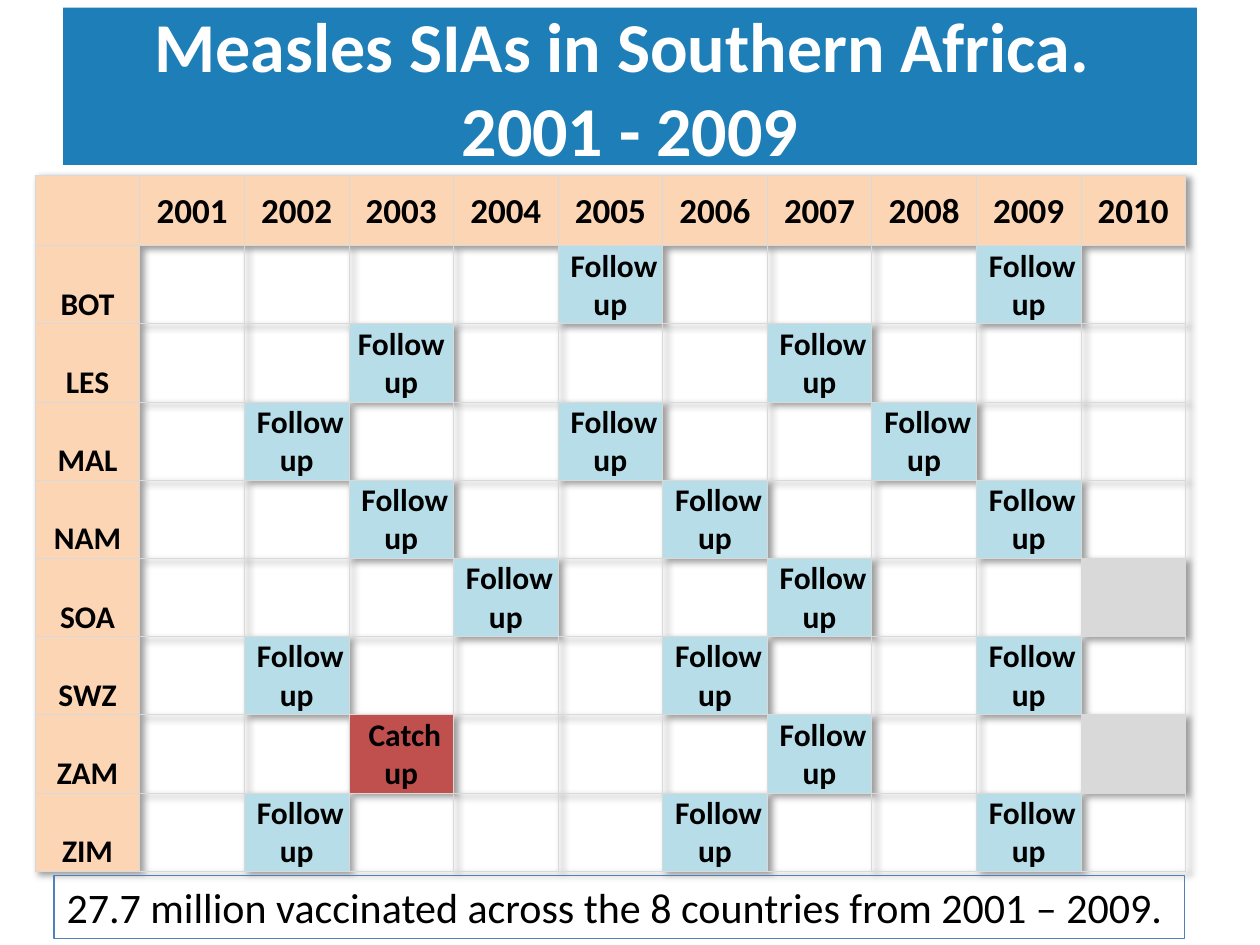
from lxml import etree
from pptx import Presentation
from pptx.dml import color
from pptx.enum import shapes, text
from pptx.oxml import ns, parse_xml
from pptx.util import Inches, Pt

YEARS = range(2001, 2011)
FOLLOW_UPS = {
    "BOT": (2005, 2009),
    "LES": (2003, 2007),
    "MAL": (2002, 2005, 2008),
    "NAM": (2003, 2006, 2009),
    "SOA": (2004, 2007),
    "SWZ": (2002, 2006, 2009),
    "ZAM": (2007,),
    "ZIM": (2002, 2006, 2009),
}
SPECIAL = {
    ("LES", 2003): ("Follow up", "B7DEE8"),
    ("ZAM", 2003): (" Catch up", "C0504D"),
    ("SOA", 2010): ("", "D9D9D9"),
    ("ZAM", 2010): ("", "D9D9D9"),
}
HEADING = "FCD5B5"
FOLLOW = "B7DEE8"


def rgb(value):
    """Turn a hex string into a colour."""
    return color.RGBColor.from_string(value)


def paint(fill, value):
    """Fill with a colour, or with nothing."""
    if value:
        fill.solid()
        fill.fore_color.rgb = rgb(value)
    else:
        fill.background()


def write(frame, words, size=18, ink="000000", bold=False, align=text.PP_ALIGN.CENTER):
    """Write one paragraph, breaking lines where the words do."""
    para = frame.paragraphs[0]
    para.alignment = align
    for index, line in enumerate(words.splitlines()):
        if index:
            para.add_line_break()
        span = para.add_run()
        span.text = line
        span.font.name = "Calibri"
        span.font.size = Pt(size)
        span.font.bold = bold
        span.font.color.rgb = rgb(ink)


def add_title(page, words):
    """Place the title on its blue band."""
    box = page.shapes.title
    box.left, box.top, box.width, box.height = map(Inches, (0.5, 0.06, 9, 1.25))
    paint(box.fill, "1E7FB8")
    frame = box.text_frame
    frame.auto_size = text.MSO_AUTO_SIZE.NONE
    frame.vertical_anchor = text.MSO_ANCHOR.MIDDLE
    write(frame, words, size=40, ink="FFFFFF", bold=True)


def add_borders(cell):
    """Draw thin grey lines on all four sides of a cell."""
    props = cell._tc.get_or_add_tcPr()
    for index, side in enumerate(("lnL", "lnR", "lnT", "lnB")):
        line = etree.Element(ns.qn(f"a:{side}"), w=str(Pt(0.5)))
        fill = etree.SubElement(line, ns.qn("a:solidFill"))
        etree.SubElement(fill, ns.qn("a:srgbClr"), val="D9D9D9")
        props.insert(index, line)


def fill_cell(cell, words="", fill=None, size=18, anchor=text.MSO_ANCHOR.MIDDLE):
    """Format one table cell and write its words."""
    paint(cell.fill, fill)
    add_borders(cell)
    if words:
        cell.margin_left = cell.margin_right = cell.margin_top = Inches(0.01)
        cell.margin_bottom = 0
        cell.vertical_anchor = anchor
        write(cell.text_frame, words, size=size, bold=True)


def add_shadow(table):
    """Give the table a soft shadow to the lower right."""
    table._tbl.tblPr.insert(0, parse_xml(
        f'<a:effectLst {ns.nsdecls("a")}>'
        '<a:outerShdw blurRad="50800" dist="38100" dir="2700000" algn="tl" rotWithShape="0">'
        '<a:srgbClr val="000000"><a:alpha val="40000"/></a:srgbClr>'
        '</a:outerShdw></a:effectLst>'))


def activity(country, year):
    """Return the words and fill for a country in a year."""
    if (country, year) in SPECIAL:
        return SPECIAL[country, year]
    return (" Follow up", FOLLOW) if year in FOLLOW_UPS[country] else ("", None)


def add_schedule(page):
    """Add the table of countries by year."""
    table = page.shapes.add_table(
        len(FOLLOW_UPS) + 1, len(YEARS) + 1,
        Inches(0.28), Inches(1.39), Inches(9.13), Inches(5.52)).table
    table.first_row = table.horz_banding = False
    add_shadow(table)
    for column in table.columns:
        column.width = Inches(0.83)
    for index, row in enumerate(table.rows):
        row.height = Inches(0.62 if index else 0.56)
    fill_cell(table.cell(0, 0), fill=HEADING)
    for col, year in enumerate(YEARS, 1):
        fill_cell(table.cell(0, col), str(year), HEADING, size=20)
    for row, country in enumerate(FOLLOW_UPS, 1):
        fill_cell(table.cell(row, 0), country, HEADING, anchor=text.MSO_ANCHOR.BOTTOM)
        for col, year in enumerate(YEARS, 1):
            fill_cell(table.cell(row, col), *activity(country, year))


def add_summary(page, words):
    """Add the outlined summary line below the table."""
    box = page.shapes.add_shape(
        shapes.MSO_SHAPE.RECTANGLE, Inches(0.43), Inches(6.95), Inches(8.97), Inches(0.5))
    box.shadow.inherit = False
    paint(box.fill, None)
    box.line.color.rgb = rgb("4F81BD")
    box.line.width = Pt(0.75)
    frame = box.text_frame
    frame.word_wrap = False
    frame.auto_size = text.MSO_AUTO_SIZE.SHAPE_TO_FIT_TEXT
    frame.vertical_anchor = text.MSO_ANCHOR.TOP
    write(frame, words, size=24, align=text.PP_ALIGN.LEFT)


def main():
    """Build the slide and save the deck."""
    deck = Presentation()
    deck.slide_width, deck.slide_height = Inches(10), Inches(7.5)
    page = deck.slides.add_slide(deck.slide_layouts[5])
    add_title(page, "Measles SIAs in Southern Africa. \n2001 - 2009")
    add_schedule(page)
    add_summary(page, "27.7 million vaccinated across the 8 countries from 2001 – 2009.")
    deck.save("out.pptx")


if __name__ == "__main__":
    main()
